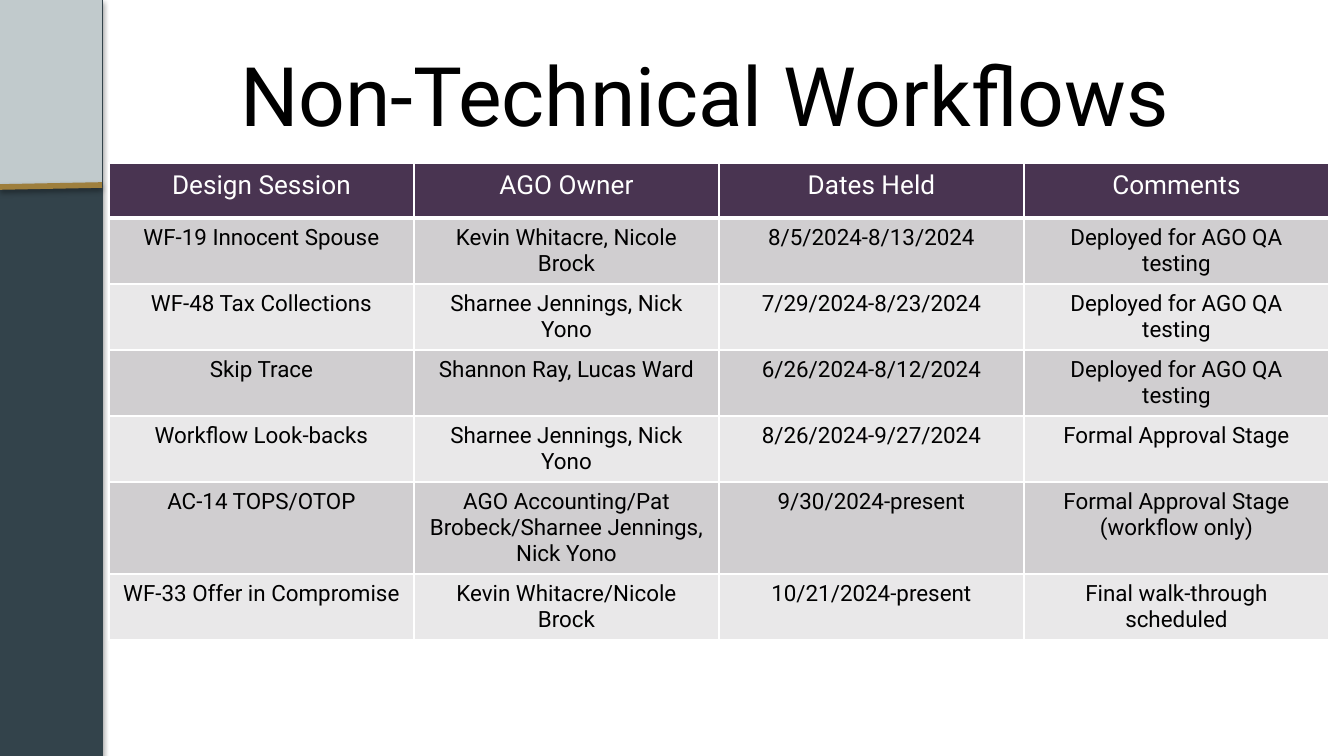
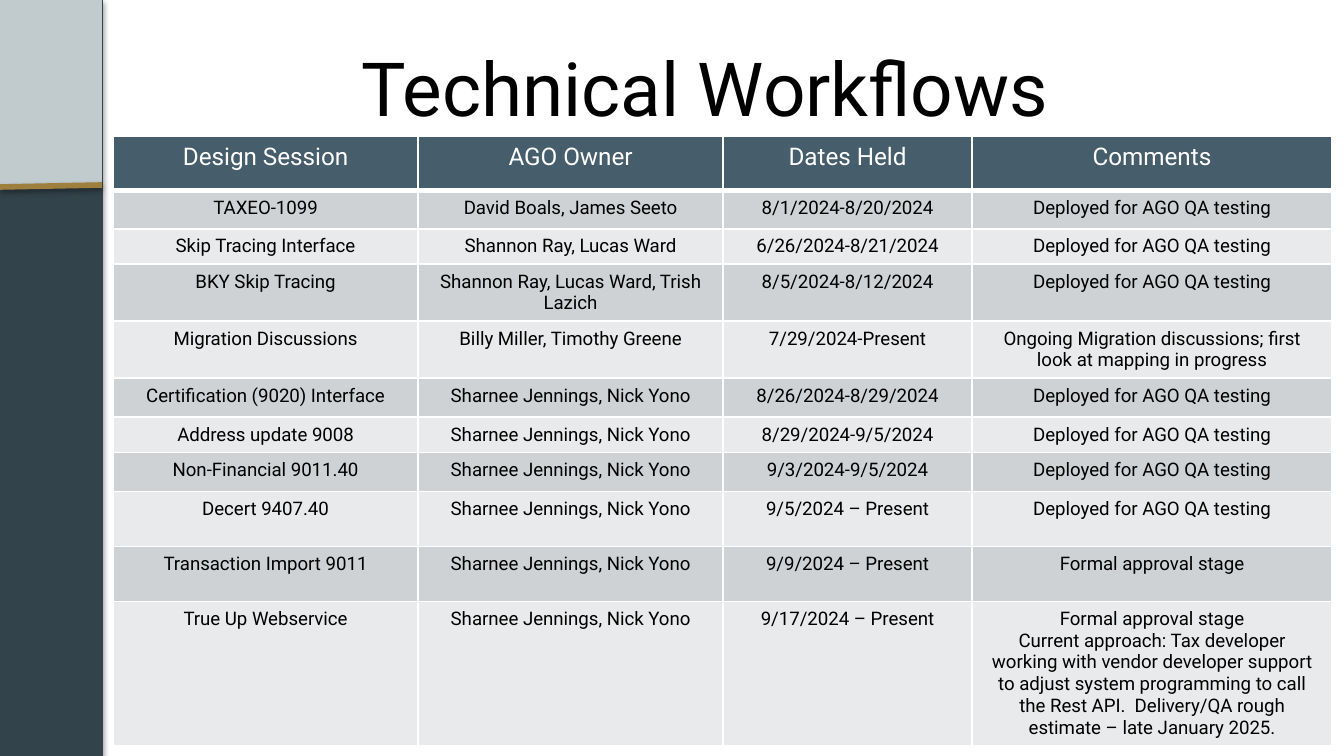
from lxml import etree
from pptx import Presentation
from pptx.dml.color import RGBColor
from pptx.enum.shapes import MSO_CONNECTOR, MSO_SHAPE
from pptx.enum.text import MSO_ANCHOR, PP_ALIGN
from pptx.oxml.ns import qn
from pptx.util import Emu, Pt

EMU_PER_PX = 914400 / 134.4
SLIDE_WIDTH, SLIDE_HEIGHT = 1344, 756
TITLE_ONLY = 5
RECTANGLE = MSO_SHAPE.RECTANGLE
STRAIGHT = MSO_CONNECTOR.STRAIGHT
CENTER = PP_ALIGN.CENTER
MIDDLE = MSO_ANCHOR.MIDDLE

FONT = "Roboto"
BLACK = RGBColor(0x00, 0x00, 0x00)
WHITE = RGBColor(0xFF, 0xFF, 0xFF)
SLATE = RGBColor(0x33, 0x43, 0x4B)
MIST = RGBColor(0xC1, 0xCA, 0xCC)
GOLD = RGBColor(0x9E, 0x7F, 0x3D)
PURPLE = RGBColor(0x49, 0x34, 0x51)
PURPLE_BANDS = (RGBColor(0xD0, 0xCE, 0xD0), RGBColor(0xE9, 0xE8, 0xE9))
BLUE = RGBColor(0x46, 0x5D, 0x6B)
BLUE_BANDS = (RGBColor(0xCF, 0xD2, 0xD4), RGBColor(0xE9, 0xEA, 0xEB))

SIDEBAR_BOX = (0, 0, 102, SLIDE_HEIGHT)
HEADINGS = ("Design Session", "AGO Owner", "Dates Held", "Comments")
DEPLOYED = "Deployed for AGO QA testing"
JENNINGS_YONO = "Sharnee Jennings, Nick Yono"
RAY_WARD = "Shannon Ray, Lucas Ward"

NON_TECHNICAL_ROWS = (
    ("WF-19 Innocent Spouse", "Kevin Whitacre, Nicole Brock", "8/5/2024-8/13/2024", DEPLOYED),
    ("WF-48 Tax Collections", JENNINGS_YONO, "7/29/2024-8/23/2024", DEPLOYED),
    ("Skip Trace", RAY_WARD, "6/26/2024-8/12/2024", DEPLOYED),
    ("Workflow Look-backs", JENNINGS_YONO, "8/26/2024-9/27/2024", "Formal Approval Stage"),
    ("AC-14 TOPS/OTOP", "AGO Accounting/Pat Brobeck/Sharnee Jennings, Nick Yono",
     "9/30/2024-present", "Formal Approval Stage (workflow only)"),
    ("WF-33 Offer in Compromise", "Kevin Whitacre/Nicole Brock", "10/21/2024-present",
     "Final walk-through scheduled"),
)
TECHNICAL_ROWS = (
    ("TAXEO-1099", "David Boals, James Seeto", "8/1/2024-8/20/2024", DEPLOYED),
    ("Skip Tracing Interface", RAY_WARD, "6/26/2024-8/21/2024", DEPLOYED),
    ("BKY Skip Tracing", RAY_WARD + ", Trish Lazich", "8/5/2024-8/12/2024", DEPLOYED),
    ("Migration Discussions", "Billy Miller, Timothy Greene", "7/29/2024-Present",
     "Ongoing Migration discussions; first look at mapping in progress"),
    ("Certification (9020) Interface", JENNINGS_YONO, "8/26/2024-8/29/2024", DEPLOYED),
    ("Address update 9008", JENNINGS_YONO, "8/29/2024-9/5/2024", DEPLOYED),
    ("Non-Financial 9011.40", JENNINGS_YONO, "9/3/2024-9/5/2024", DEPLOYED),
    ("Decert 9407.40", JENNINGS_YONO, "9/5/2024 – Present", DEPLOYED),
    ("Transaction Import 9011", JENNINGS_YONO, "9/9/2024 – Present", "Formal approval stage"),
    ("True Up Webservice", JENNINGS_YONO, "9/17/2024 – Present",
     "Formal approval stage\nCurrent approach: Tax developer working with vendor developer "
     "support to adjust system programming to call the Rest API.  Delivery/QA rough estimate "
     "– late January 2025."),
)


def px(length):
    """Turn pixels into EMU."""
    return Emu(round(length * EMU_PER_PX))


def add_shadow(shape, blur, distance, opacity):
    """Give a shape a soft black shadow straight below it."""
    effects = etree.SubElement(shape.element.spPr, qn("a:effectLst"))
    shadow = etree.SubElement(effects, qn("a:outerShdw"), blurRad=str(Pt(blur)),
                              dist=str(Pt(distance)), dir="5400000", rotWithShape="0")
    color = etree.SubElement(shadow, qn("a:srgbClr"), val=str(BLACK))
    etree.SubElement(color, qn("a:alpha"), val=str(opacity * 1000))


def add_panel(slide, box, color):
    """Add a filled rectangle."""
    panel = slide.shapes.add_shape(RECTANGLE, *map(px, box))
    panel.fill.solid()
    panel.fill.fore_color.rgb = color
    return panel


def build_sidebar(slide, layout, box):
    """Draw the sidebar and move it to the layout, behind its title."""
    left, top, width, height = box
    column = add_panel(slide, box, SLATE)
    column.line.color.rgb = SLATE
    column.line.width = Pt(0.75)
    add_shadow(column, 3.1, 1.8, 35)

    cap = add_panel(slide, (left, top, width, 185), MIST)
    cap.line.fill.background()
    cap.shadow.inherit = False

    ends = (left, top + 187, left + width, top + 185)
    rule = slide.shapes.add_connector(STRAIGHT, *map(px, ends))
    rule.line.color.rgb = GOLD
    rule.line.width = Pt(3)
    add_shadow(rule, 3.1, 1.6, 38)

    for index, part in enumerate((column, cap, rule), start=2):
        layout.shapes.element.insert(index, part.element)


def format_paragraphs(text_frame, size, color):
    """Centre all paragraphs in the shared font."""
    for paragraph in text_frame.paragraphs:
        paragraph.alignment = CENTER
        paragraph.font.name = FONT
        paragraph.font.size = Pt(size)
        paragraph.font.bold = False
        paragraph.font.color.rgb = color


def build_title(slide, text, box, size):
    """Fill and place the title placeholder."""
    title = slide.shapes.title
    title.left, title.top, title.width, title.height = map(px, box)
    title.text_frame.text = text
    title.text_frame.vertical_anchor = MIDDLE
    format_paragraphs(title.text_frame, size, BLACK)


def set_borders(cell, **widths):
    """Draw white cell borders, one point wide unless a side says otherwise."""
    properties = cell._tc.get_or_add_tcPr()
    for side in "LRTB":
        border = etree.SubElement(properties, qn(f"a:ln{side}"), w=str(Pt(widths.get(side, 1))))
        fill = etree.SubElement(border, qn("a:solidFill"))
        etree.SubElement(fill, qn("a:srgbClr"), val=str(WHITE))


def build_table(slide, origin, columns, row_heights, rows, header_color, bands, sizes):
    """Add a banded table with a heading row."""
    header_size, body_size = sizes
    left, top = origin
    box = (left, top, sum(columns), sum(row_heights))
    table = slide.shapes.add_table(len(row_heights), len(columns), *map(px, box)).table
    for column, width in zip(table.columns, columns):
        column.width = px(width)
    for row, height in zip(table.rows, row_heights):
        row.height = px(height)
    for row_index, texts in enumerate((HEADINGS, *rows)):
        header = row_index == 0
        for column_index, text in enumerate(texts):
            cell = table.cell(row_index, column_index)
            cell.text = text
            set_borders(cell, B=3 if header else 1, T=3 if row_index == 1 else 1)
            cell.fill.solid()
            cell.fill.fore_color.rgb = header_color if header else bands[(row_index - 1) % 2]
            format_paragraphs(cell.text_frame, header_size if header else body_size,
                              WHITE if header else BLACK)


def build_non_technical(slide):
    """Build the slide of non-technical workflows."""
    build_title(slide, "Non-Technical Workflows", (133, 31, 1144, 126), 44)
    build_table(slide, (109, 163), [305] * 4, [55] * 7, NON_TECHNICAL_ROWS,
                PURPLE, PURPLE_BANDS, (14, 12))


def build_technical(slide):
    """Build the slide of technical workflows."""
    build_title(slide, "Technical Workflows", (133, 24, 1144, 126), 40)
    build_table(slide, (113, 136), (305, 305, 249, 360),
                (55, 38, 30, 55, 55, 39, 35, 39, 55, 55, 55), TECHNICAL_ROWS,
                BLUE, BLUE_BANDS, (13, 10))


def main():
    """Build and save the presentation."""
    presentation = Presentation()
    presentation.slide_width = px(SLIDE_WIDTH)
    presentation.slide_height = px(SLIDE_HEIGHT)
    layout = presentation.slide_layouts[TITLE_ONLY]
    for placeholder in list(layout.placeholders)[1:]:
        layout.shapes.element.remove(placeholder.element)
    first, second = (presentation.slides.add_slide(layout) for _ in range(2))
    build_sidebar(first, layout, SIDEBAR_BOX)
    build_non_technical(first)
    build_technical(second)
    presentation.save("out.pptx")


if __name__ == "__main__":
    main()
